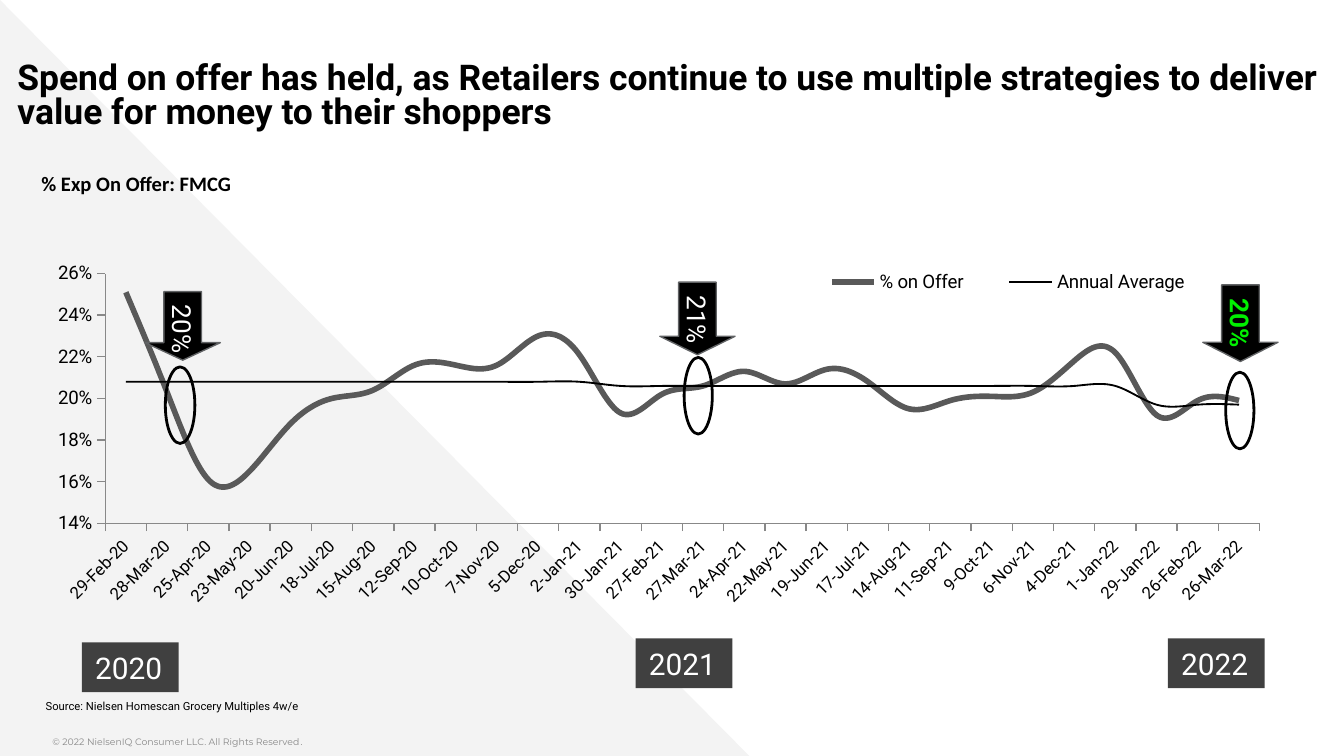
import pptx
import pptx.chart.data
import pptx.dml.color
import pptx.enum.chart
import pptx.enum.shapes
import pptx.enum.text
import pptx.oxml
import pptx.util

Inches = pptx.util.Inches
Pt = pptx.util.Pt
RGBColor = pptx.dml.color.RGBColor
SHAPE = pptx.enum.shapes.MSO_SHAPE
ALIGN = pptx.enum.text.PP_ALIGN
ANCHOR = pptx.enum.text.MSO_ANCHOR
KINDS = pptx.enum.chart

BLACK = RGBColor(0x00, 0x00, 0x00)
WHITE = RGBColor(0xFF, 0xFF, 0xFF)
GREEN = RGBColor(0x00, 0xF0, 0x00)
PALE = RGBColor(0xF3, 0xF3, 0xF3)
MUTED = RGBColor(0x88, 0x88, 0x88)
EDGE = RGBColor(0x61, 0x63, 0x65)
DARK = RGBColor(0x40, 0x40, 0x40)
GREY = RGBColor(0x59, 0x59, 0x59)

FIRST_DAY = 43890  # 29-Feb-20 as a date serial
PERIOD = 28
OFFER = [
    0.251, 0.203, 0.161, 0.165, 0.188, 0.2, 0.204, 0.216, 0.216, 0.216,
    0.23, 0.221, 0.193, 0.202, 0.206, 0.213, 0.207, 0.214, 0.208, 0.195,
    0.199, 0.201, 0.203, 0.218, 0.222, 0.192, 0.199, 0.199,
]
AVERAGE = [0.208] * 12 + [0.206] * 13 + [0.197] * 3


def place(box):
    return [Inches(n) for n in box]


def style(font, size, color=BLACK, bold=False, name="Roboto"):
    font.size, font.bold, font.name = Pt(size), bold, name
    font.color.rgb = color


def add_run(para, text, *look, **more):
    run = para.add_run()
    run.text = text
    style(run.font, *look, **more)


def add_text(slide, box, side, top, wrap=True):
    """Add an empty text box and return its first paragraph."""
    frame = slide.shapes.add_textbox(*place(box)).text_frame
    frame.word_wrap = wrap
    frame.margin_left = frame.margin_right = Inches(side)
    frame.margin_top = frame.margin_bottom = Inches(top)
    return frame.paragraphs[0]


def add_shape(slide, kind, box, fill=None, line=None, width=0.75):
    shape = slide.shapes.add_shape(kind, *place(box))
    shape.shadow.inherit = False
    if fill is None:
        shape.fill.background()
    else:
        shape.fill.solid()
        shape.fill.fore_color.rgb = fill
    if line is None:
        shape.line.fill.background()
    else:
        shape.line.color.rgb = line
        shape.line.width = Pt(width)
    return shape


def add_label(shape, align, text, *look):
    frame = shape.text_frame
    frame.word_wrap = False
    frame.vertical_anchor = ANCHOR.MIDDLE
    para = frame.paragraphs[0]
    para.alignment = align
    add_run(para, text, *look)


def add_ring(slide, left, top, width):
    add_shape(slide, SHAPE.OVAL, (left, top, width, 0.57), None, BLACK, 1.5)


def add_arrow(slide, left, top, height, text, color, bold):
    """Add a down arrow whose text is turned to run along it."""
    arrow = add_shape(slide, SHAPE.DOWN_ARROW, (left, top, 0.56, height),
                      BLACK, EDGE)
    arrow.adjustments[0] = 0.5
    arrow.adjustments[1] = 0.255
    add_label(arrow, ALIGN.CENTER, text, 14, color, bold)
    arrow.text_frame._txBody.bodyPr.set("vert", "eaVert")


def add_year(slide, left, top, text):
    tag = add_shape(slide, SHAPE.RECTANGLE, (left, top, 0.72, 0.37), DARK)
    add_label(tag, ALIGN.LEFT, text, 16, WHITE)


def make_layout(x, y, w, h, inner=False):
    """Return a manual layout element, in shares of the chart."""
    target = '<c:layoutTarget val="inner"/>' if inner else ""
    sizes = "".join(f'<c:{key} val="{val}"/>'
                    for key, val in zip("xywh", (x, y, w, h)))
    space = "http://schemas.openxmlformats.org/drawingml/2006/chart"
    return pptx.oxml.parse_xml(
        f'<c:layout xmlns:c="{space}"><c:manualLayout>{target}'
        '<c:xMode val="edge"/><c:yMode val="edge"/>'
        f'{sizes}</c:manualLayout></c:layout>')


def set_layout(node, layout, spot):
    for old in node.xpath("c:layout"):
        node.remove(old)
    node.insert(spot, layout)


def set_axis(axis, size, form):
    axis.has_major_gridlines = False
    axis.major_tick_mark = KINDS.XL_TICK_MARK.OUTSIDE
    axis.minor_tick_mark = KINDS.XL_TICK_MARK.NONE
    axis.format.line.color.rgb = MUTED
    axis.format.line.width = Pt(0.75)
    labels = axis.tick_labels
    labels.number_format = form
    labels.number_format_is_linked = False
    style(labels.font, size)


def add_chart(slide):
    data = pptx.chart.data.CategoryChartData(number_format="0.0%")
    data.categories = [FIRST_DAY + PERIOD * n for n in range(len(OFFER))]
    data.categories.number_format = "d-mmm-yy"
    data.add_series("% on Offer", OFFER)
    data.add_series("Annual Average", AVERAGE)
    chart = slide.shapes.add_chart(KINDS.XL_CHART_TYPE.LINE,
                                   *place((0.32, 1.87, 9.45, 3.25)),
                                   data).chart
    style(chart.font, 18, name="Arial")
    chart.has_title = False
    plot = chart.plots[0]
    plot.vary_by_categories = False
    for series, color, width in zip(plot.series, (GREY, BLACK), (3, 1)):
        series.smooth = True
        series.marker.style = KINDS.XL_MARKER_STYLE.NONE
        series.format.line.color.rgb = color
        series.format.line.width = Pt(width)

    dates, rates = chart.category_axis, chart.value_axis
    set_axis(dates, 9, "d-mmm-yy")
    dates.tick_label_position = KINDS.XL_TICK_LABEL_POSITION.LOW
    dates._element.xpath("c:txPr/a:bodyPr")[0].set("rot", "-2700000")
    # Keep one even step per category rather than a time scale.
    dates._element.xpath("c:auto")[0].set("val", "0")
    set_axis(rates, 10, "0%")
    rates.minimum_scale, rates.maximum_scale = 0.14, 0.26
    rates.major_unit = 0.02

    chart.has_legend = True
    legend = chart.legend
    legend.position = KINDS.XL_LEGEND_POSITION.RIGHT
    legend.include_in_layout = True
    style(legend.font, 10)
    set_layout(legend._element, make_layout(0.59, 0.02, 0.34, 0.1), 1)
    area = chart._chartSpace.chart.plotArea
    set_layout(area, make_layout(0.049, 0.051, 0.909, 0.572, True), 0)


def main():
    deck = pptx.Presentation()
    deck.slide_width = Inches(10)
    deck.slide_height = deck.slide_width * 9 // 16
    slide = deck.slides.add_slide(deck.slide_layouts[6])

    add_shape(slide, SHAPE.RIGHT_TRIANGLE, (0, 0, 5.59, 5.64), PALE)
    rights = add_text(slide, (0.39, 5.43, 5.54, 0.2), 0, 0.05)
    add_run(rights, "© 2022 NielsenIQ Consumer LLC. All Rights Reserved", 5,
            MUTED, name="Montserrat")
    add_run(rights, ".", 5, MUTED)
    add_chart(slide)
    source = add_text(slide, (0.22, 5.15, 5, 0.57), 0.12, 0.16)
    add_run(source, "Source: Nielsen Homescan Grocery Multiples 4w/e", 6)
    title = add_text(slide, (0.13, 0.37, 9.91, 0.69), 0, 0.1)
    title.line_spacing = 0.8
    add_run(title, "Spend on offer has held, as Retailers continue to use "
            "multiple strategies to deliver value for money to their "
            "shoppers", 19, BLACK, True)
    head = add_text(slide, (0.21, 1.22, 1.67, 0.29), 0.1, 0.05, False)
    add_run(head, "% Exp On Offer: FMCG", 11, BLACK, True, "Calibri")

    for ring in ((1.23, 2.73, 0.22), (5.09, 2.66, 0.21), (9.12, 2.77, 0.21)):
        add_ring(slide, *ring)
    for arrow in ((1.08, 2.17, 0.51, "20%", WHITE, False),
                  (4.91, 2.1, 0.54, "21%", WHITE, False),
                  (8.95, 2.12, 0.57, "20%", GREEN, True)):
        add_arrow(slide, *arrow)
    for year in ((0.61, 4.78, "2020"), (4.73, 4.75, "2021"),
                 (8.69, 4.75, "2022")):
        add_year(slide, *year)
    deck.save("out.pptx")


if __name__ == "__main__":
    main()
